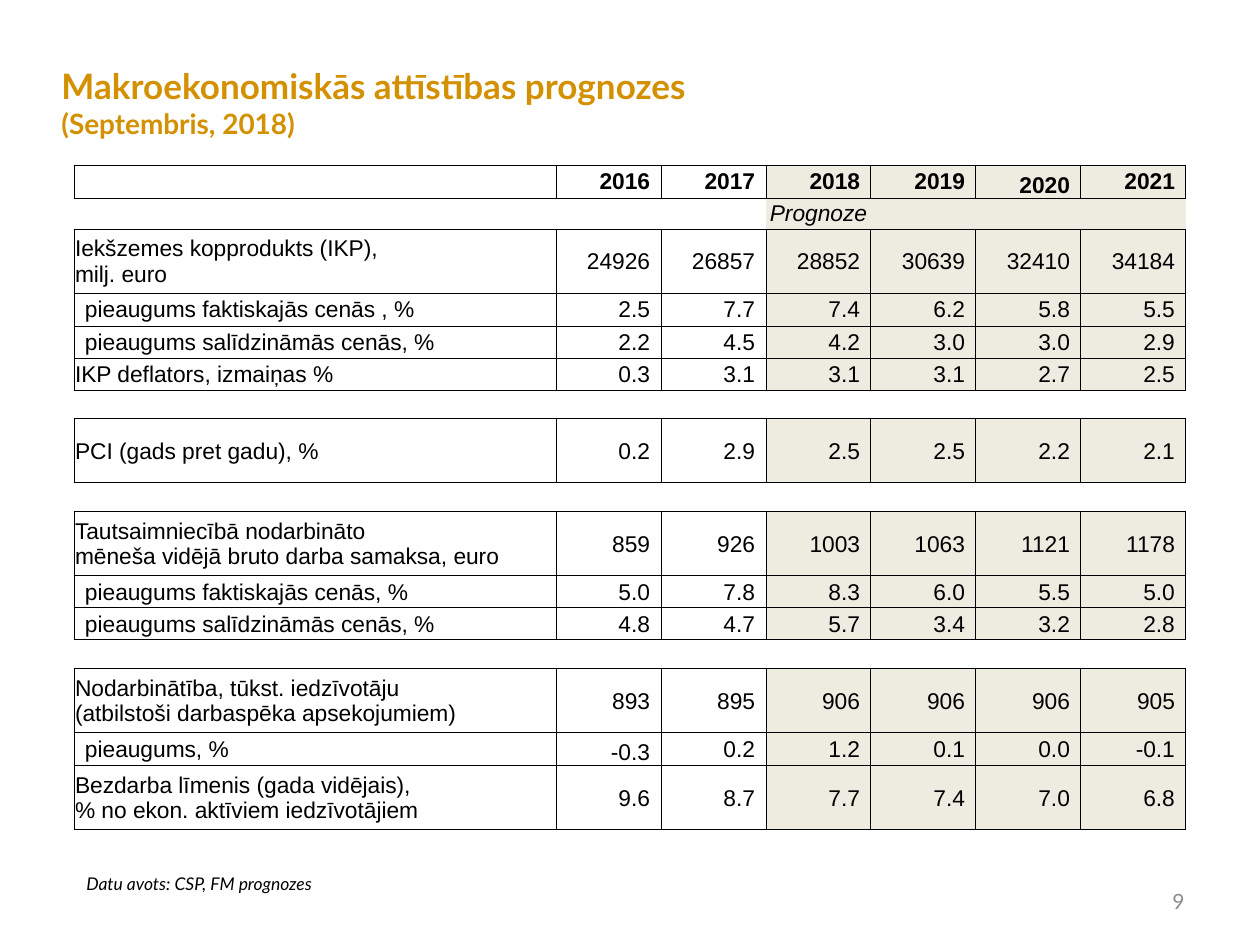
from lxml import etree
from pptx import Presentation, util as u
from pptx.dml.color import RGBColor
from pptx.enum import text as t
from pptx.oxml.ns import qn

PX = 914400 // 126
GOLD, BLACK, GREY, WHITE, SAND = "D39001", "000000", "8C8C8C", "FFFFFF", "EEECE1"
LEFT, RIGHT, MID = t.PP_ALIGN.LEFT, t.PP_ALIGN.RIGHT, t.PP_ALIGN.CENTER

YEARS = ["2016", "2017", "2018", "2019", "2020", "2021"]
NOTE = "Prognoze"
FIRST = 3  # first forecast column
GAP = (29, "", [])
# row height, label, values; a label starting with ">" is indented
ROWS = [
    (33, "", YEARS),
    (31, "", []),
    (64, "Iekšzemes kopprodukts (IKP),\nmilj. euro",
     ["24926", "26857", "28852", "30639", "32410", "34184"]),
    (33, ">pieaugums faktiskajās cenās , %",
     ["2.5", "7.7", "7.4", "6.2", "5.8", "5.5"]),
    (32, ">pieaugums salīdzināmās cenās, %",
     ["2.2", "4.5", "4.2", "3.0", "3.0", "2.9"]),
    (32, "IKP deflators, izmaiņas %",
     ["0.3", "3.1", "3.1", "3.1", "2.7", "2.5"]),
    GAP,
    (64, "PCI (gads pret gadu), %",
     ["0.2", "2.9", "2.5", "2.5", "2.2", "2.1"]),
    GAP,
    (64, "Tautsaimniecībā nodarbināto\nmēneša vidējā bruto darba samaksa, euro",
     ["859", "926", "1003", "1063", "1121", "1178"]),
    (32, ">pieaugums faktiskajās cenās, %",
     ["5.0", "7.8", "8.3", "6.0", "5.5", "5.0"]),
    (32, ">pieaugums salīdzināmās cenās, %",
     ["4.8", "4.7", "5.7", "3.4", "3.2", "2.8"]),
    GAP,
    (64, "Nodarbinātība, tūkst. iedzīvotāju\n(atbilstoši darbaspēka apsekojumiem)",
     ["893", "895", "906", "906", "906", "905"]),
    (33, ">pieaugums, %",
     ["-0.3", "0.2", "1.2", "0.1", "0.0", "-0.1"]),
    (64, "Bezdarba līmenis (gada vidējais),\n% no ekon. aktīviem iedzīvotājiem",
     ["9.6", "8.7", "7.7", "7.4", "7.0", "6.8"]),
]
COLS = [482] + [105] * len(YEARS)
LOW = {(0, 5), (14, 1)}  # cells anchored at the bottom


def rgb(code):
    return RGBColor.from_string(code)


def write(para, words, size, face, color, bold=False, italic=False):
    for i, line in enumerate(words.split("\n")):
        if i:
            para.add_line_break()
        run = para.add_run()
        run.text = line
        font = run.font
        font.size, font.name = u.Pt(size), face
        font.bold, font.italic = bold, italic
        font.color.rgb = rgb(color)


def box(slide, x, y, w, h, anchor, align=LEFT):
    """Add a wrapping text box and return its first paragraph."""
    frame = slide.shapes.add_textbox(*(n * PX for n in (x, y, w, h))).text_frame
    frame.word_wrap = True
    frame.vertical_anchor = anchor
    para = frame.paragraphs[0]
    para.alignment = align
    return para


def edge(cell, sides):
    """Draw thin black lines on the given sides and clear the others."""
    props = cell._tc.get_or_add_tcPr()
    for side in "LRTB":
        line = etree.SubElement(props, qn("a:ln" + side), w=str(u.Pt(0.5)))
        if side in sides:
            fill = etree.SubElement(line, qn("a:solidFill"))
            etree.SubElement(fill, qn("a:srgbClr"), val=BLACK)
        else:
            etree.SubElement(line, qn("a:noFill"))


def fill_cell(cell, r, c):
    _, label, vals = ROWS[r]
    words, align, bold, italic = label, LEFT, False, False
    pad_l = pad_r = 1
    if c and vals:
        words, align, bold, pad_r = vals[c - 1], RIGHT, r == 0, 11
    elif (r, c) == (1, FIRST):
        words, align, italic = NOTE, MID, True
    elif label.startswith(">"):
        words, pad_l = label[1:], 11
    cell.margin_left, cell.margin_right = pad_l * PX, pad_r * PX
    cell.margin_top, cell.margin_bottom = PX, 0
    cell.vertical_anchor = t.MSO_ANCHOR.BOTTOM if (r, c) in LOW else t.MSO_ANCHOR.MIDDLE
    edge(cell, "LRTB" if vals else "TB")
    cell.fill.solid()
    shade = c >= FIRST and (vals or r == 1)
    cell.fill.fore_color.rgb = rgb(SAND if shade else WHITE)
    para = cell.text_frame.paragraphs[0]
    para.alignment = align
    if words:
        write(para, words, 13, "Arial", BLACK, bold, italic)
    else:
        etree.SubElement(para._p, qn("a:endParaRPr"), sz="1000")


def add_grid(slide):
    high = [row[0] for row in ROWS]
    grid = slide.shapes.add_table(len(ROWS), len(COLS), 74 * PX, 165 * PX,
                                  sum(COLS) * PX, sum(high) * PX).table
    grid.first_row = grid.horz_banding = False
    for col, wide in zip(grid.columns, COLS):
        col.width = wide * PX
    for r, tall in enumerate(high):
        grid.rows[r].height = tall * PX
        for c in range(len(COLS)):
            fill_cell(grid.cell(r, c), r, c)


def main():
    deck = Presentation()
    deck.slide_width, deck.slide_height = u.Inches(10), u.Inches(7.5)
    slide = deck.slides.add_slide(deck.slide_layouts[6])

    page = box(slide, 903, 876, 294, 50, t.MSO_ANCHOR.MIDDLE, RIGHT)
    write(page, "9", 12, "Lato", GREY)

    title = box(slide, 49, 55, 853, 95, t.MSO_ANCHOR.MIDDLE)
    write(title, "Makroekonomiskās attīstības prognozes", 20, "Lato", GOLD, bold=True)
    title.add_line_break()
    write(title, "(Septembris, 2018)", 16, "Lato", GOLD, bold=True)

    source = box(slide, 74, 867, 1027, 34, t.MSO_ANCHOR.TOP)
    write(source, "Datu avots: CSP, FM prognozes", 10, "Lato", BLACK, italic=True)

    add_grid(slide)
    deck.save("out.pptx")


if __name__ == "__main__":
    main()
